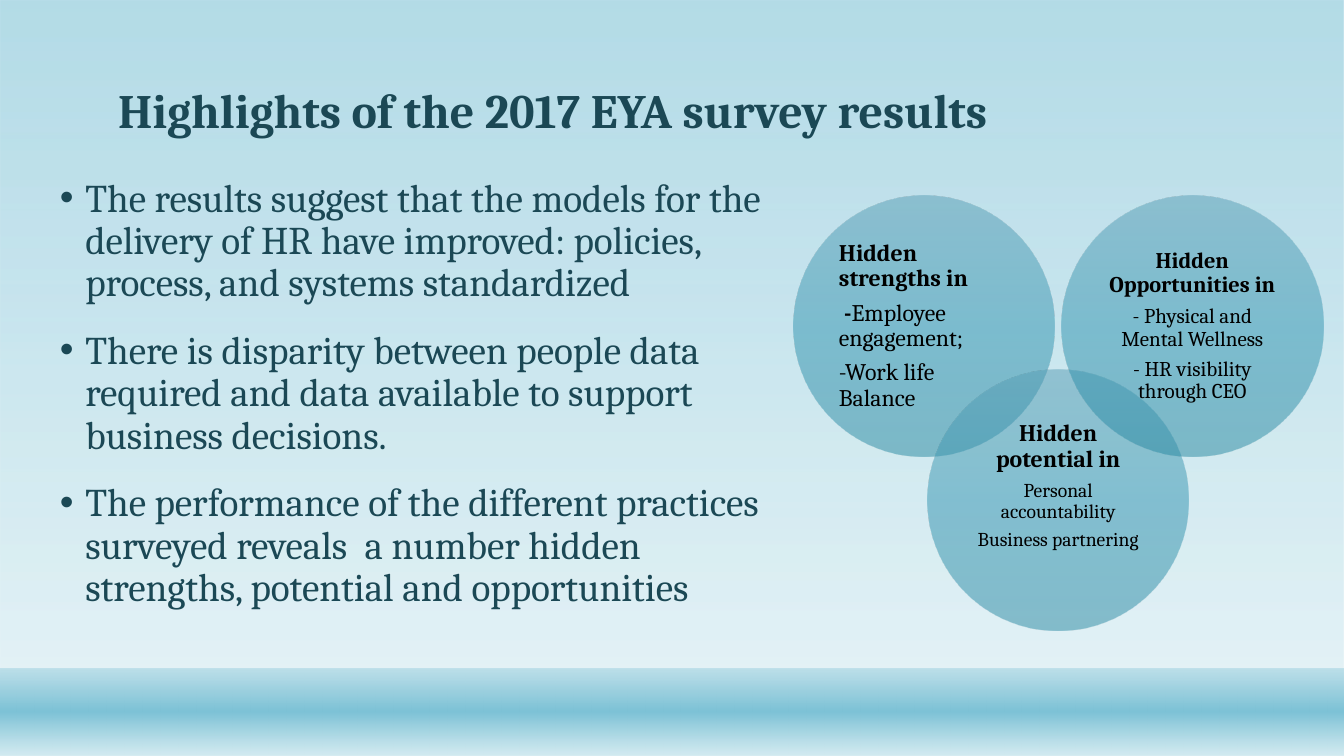
from dataclasses import dataclass
from lxml.etree import SubElement as Sub
from pptx import Presentation
from pptx.dml.color import RGBColor as RGB
from pptx.enum.shapes import MSO_SHAPE as Kind
from pptx.enum.text import MSO_ANCHOR as Anchor, MSO_AUTO_SIZE as Fit, PP_ALIGN as Align
from pptx.oxml.ns import qn
from pptx.util import Cm, Pt


@dataclass
class Theme:
    font: str = "Cambria"
    ink: str = "1B4855"
    black: str = "000000"
    title: float = 34.2
    body: float = 28
    large: float = 17
    head: float = 16
    note: float = 15
    small: float = 14
    # Gradient stops: position, colour, opacity (all but the colour in percent)
    sky: tuple = ((0, "7DC2D6", 58), (88, "D4EBF1", 65))
    sea: tuple = ((1, "7DC2D6", 38), (49, "7DC2D6", 100), (100, "D4EBF1", 89))
    disc: tuple = ((0, "589EB5", 50), (50, "3094B0", 50), (100, "2687A1", 50))


theme = Theme()


def shade(kind, left, top, width, height, stops):
    """Add a borderless shape with a gradient from top to bottom."""
    shape = slide.shapes.add_shape(kind, Cm(left), Cm(top), Cm(width), Cm(height))
    shape.shadow.inherit = False
    shape.line.fill.background()
    shape.fill.gradient()
    shape.fill.gradient_angle = 270
    group = shape._element.spPr.find(".//" + qn("a:gsLst"))
    group.clear()
    for pos, color, alpha in stops:
        stop = Sub(group, qn("a:gs"), pos=str(pos * 1000))
        tint = Sub(stop, qn("a:srgbClr"), val=color)
        Sub(tint, qn("a:alpha"), val=str(alpha * 1000))
    return shape


def style(para, size, color, bold=False):
    para.line_spacing = 0.9
    para.font.name = theme.font
    para.font.size = Pt(size)
    para.font.bold = bold
    para.font.color.rgb = RGB.from_string(color)


deck = Presentation()
deck.slide_width, deck.slide_height = Cm(33.87), Cm(19.05)
slide = deck.slides.add_slide(deck.slide_layouts[5])

# Background
shade(Kind.RECTANGLE, 0, 0, 33.87, 19.05, theme.sky)
shade(Kind.RECTANGLE, 0, 16.84, 33.87, 2.21, theme.sea)

# Title, brought in front of the background
title = slide.shapes.title
slide.shapes._spTree.append(title._element)
title.left, title.top, title.width, title.height = Cm(2.72), Cm(0.61), Cm(26.42), Cm(3.02)
frame = title.text_frame
frame.text = "Highlights of the 2017 EYA survey results"
frame.vertical_anchor = Anchor.BOTTOM
frame.auto_size = Fit.NONE
frame.paragraphs[0].alignment = Align.LEFT
style(frame.paragraphs[0], theme.title, theme.ink, True)

# Circles: left to right, each line as bold part, plain part and size
circles = [
    (4.93, Align.LEFT, 0.18, [
        ("Hidden strengths in", "", theme.large),
        (" -", "Employee engagement;", theme.large),
        ("", "-Work life Balance", theme.large)]),
    (9.32, Align.CENTER, 0.9, [
        ("Hidden potential in", "", theme.large),
        ("", "Personal accountability", theme.small),
        ("", "Business partnering", theme.small)]),
    (4.93, Align.CENTER, 0.18, [
        ("Hidden Opportunities in", "", theme.head),
        ("", "- Physical and Mental Wellness", theme.note),
        ("", "- HR visibility through CEO", theme.note)]),
]
for i, (top, align, base, lines) in enumerate(circles):
    disc = shade(Kind.OVAL, 20 + 3.38 * i, top, 6.58, 6.58, theme.disc)
    frame = disc.text_frame
    frame.word_wrap = True
    frame.vertical_anchor = Anchor.MIDDLE
    frame.margin_left = frame.margin_right = frame.margin_top = Cm(0.18)
    frame.margin_bottom = Cm(base)
    for j, (strong, plain, size) in enumerate(lines):
        para = frame.add_paragraph() if j else frame.paragraphs[0]
        para.alignment = align
        para.space_after = Pt(0.35 * size)
        style(para, size, theme.black, bool(strong))
        if strong:
            para.add_run().text = strong
        if plain:
            run = para.add_run()
            run.text = plain
            if strong:
                run.font.bold = False

# Findings
points = [
    "The results suggest that the models for the delivery of HR have improved: "
    "policies, process, and systems standardized",
    "There is disparity between people data required and data available "
    "to support business decisions.",
    "The performance of the different practices surveyed reveals  a number "
    "hidden strengths, potential and opportunities",
]
frame = slide.shapes.add_textbox(Cm(1.14), Cm(4.37), Cm(18.85), Cm(11.51)).text_frame
frame.word_wrap = True
for i, point in enumerate(points):
    para = frame.add_paragraph() if i else frame.paragraphs[0]
    para.text = point
    props = para._p.get_or_add_pPr()
    props.set("marL", str(Cm(0.76)))
    props.set("indent", str(Cm(-0.64)))
    Sub(props, qn("a:buFont"), typeface="Arial")
    Sub(props, qn("a:buChar"), char="•")
    style(para, theme.body, theme.ink)
    if i:
        para.space_before = Pt(18)

deck.save("out.pptx")
